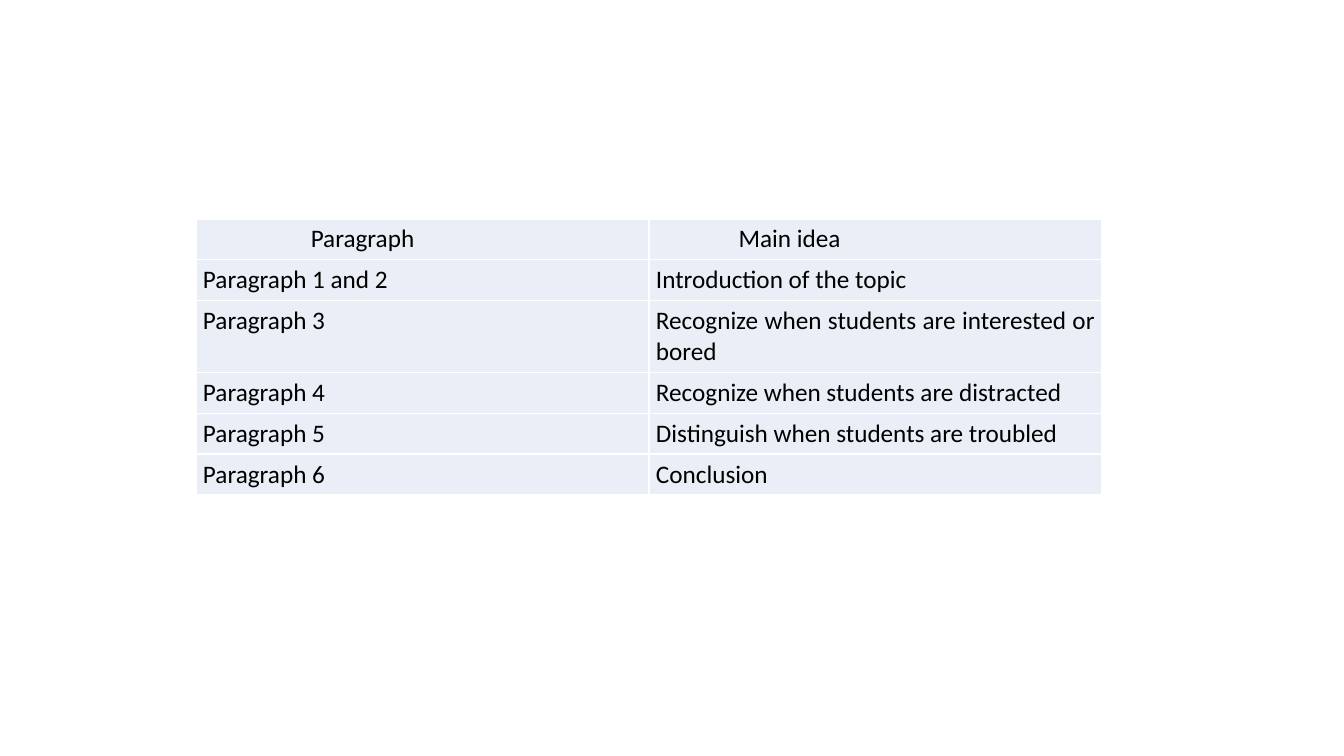
import lxml.etree
import pptx
import pptx.dml.color
import pptx.enum.text
import pptx.oxml
import pptx.oxml.ns
import pptx.util

Pt = pptx.util.Pt
BLACK = pptx.dml.color.RGBColor(0x00, 0x00, 0x00)
WHITE = pptx.dml.color.RGBColor(0xFF, 0xFF, 0xFF)
PALE_BLUE = pptx.dml.color.RGBColor(0xEA, 0xEF, 0xF7)

ROWS = [
    ("Paragraph", "Main idea"),
    ("Paragraph 1 and 2", "Introduction of the topic"),
    ("Paragraph 3", "Recognize when students are interested or bored"),
    ("Paragraph 4", "Recognize when students are distracted"),
    ("Paragraph 5", "Distinguish when students are troubled"),
    ("Paragraph 6", "Conclusion"),
]
HEADER_INDENTS = (Pt(77), Pt(59))
COLUMN_WIDTH = Pt(323.6)
LINE_HEIGHT = Pt(28.8)
ROW_HEIGHTS = [LINE_HEIGHT] * len(ROWS)
ROW_HEIGHTS[2] = Pt(50.4)

CELL_FORMAT = {
    "margin_left": Pt(5),
    "margin_right": Pt(5),
    "margin_top": Pt(3.6),
    "margin_bottom": Pt(3.6),
}
FONT_FORMAT = {"name": "Calibri", "size": Pt(18), "bold": False}


def set_attributes(target, values):
    for name, value in values.items():
        setattr(target, name, value)


def add_borders(cell, color, width):
    """Draw all four sides; border elements must precede the cell fill."""
    properties = cell._tc.get_or_add_tcPr()
    for position, side in enumerate(("lnL", "lnR", "lnT", "lnB")):
        line = pptx.oxml.parse_xml(
            f'<a:{side} {pptx.oxml.ns.nsdecls("a")} w="{int(width)}">'
            f'<a:solidFill><a:srgbClr val="{color}"/></a:solidFill></a:{side}>'
        )
        properties.insert(position, line)


def fill_cell(cell, text, first_line_indent):
    set_attributes(cell, CELL_FORMAT)
    cell.fill.solid()
    cell.fill.fore_color.rgb = PALE_BLUE
    add_borders(cell, WHITE, Pt(1))
    cell.text = text
    paragraph = cell.text_frame.paragraphs[0]
    paragraph.alignment = pptx.enum.text.PP_ALIGN.JUSTIFY
    if first_line_indent:
        properties = paragraph._p.get_or_add_pPr()
        properties.set("marL", "0")
        properties.set("indent", str(int(first_line_indent)))
    font = paragraph.runs[0].font
    set_attributes(font, FONT_FORMAT)
    font.color.rgb = BLACK


def add_main_idea_table(slide):
    column_count = len(ROWS[0])
    frame = slide.shapes.add_table(
        len(ROWS), column_count, Pt(140), Pt(156.4),
        COLUMN_WIDTH * column_count, sum(ROW_HEIGHTS),
    )
    table = frame.table
    set_attributes(table, {"first_row": False, "horz_banding": False})
    for column in table.columns:
        column.width = COLUMN_WIDTH
    for row_index, texts in enumerate(ROWS):
        table.rows[row_index].height = ROW_HEIGHTS[row_index]
        for column_index, text in enumerate(texts):
            indent = HEADER_INDENTS[column_index] if row_index == 0 else 0
            fill_cell(table.cell(row_index, column_index), text, indent)


def main():
    presentation = pptx.Presentation()
    set_attributes(presentation, {"slide_width": Pt(960), "slide_height": Pt(540)})
    slide = presentation.slides.add_slide(presentation.slide_layouts[6])
    add_main_idea_table(slide)
    presentation.save("out.pptx")


if __name__ == "__main__":
    main()
